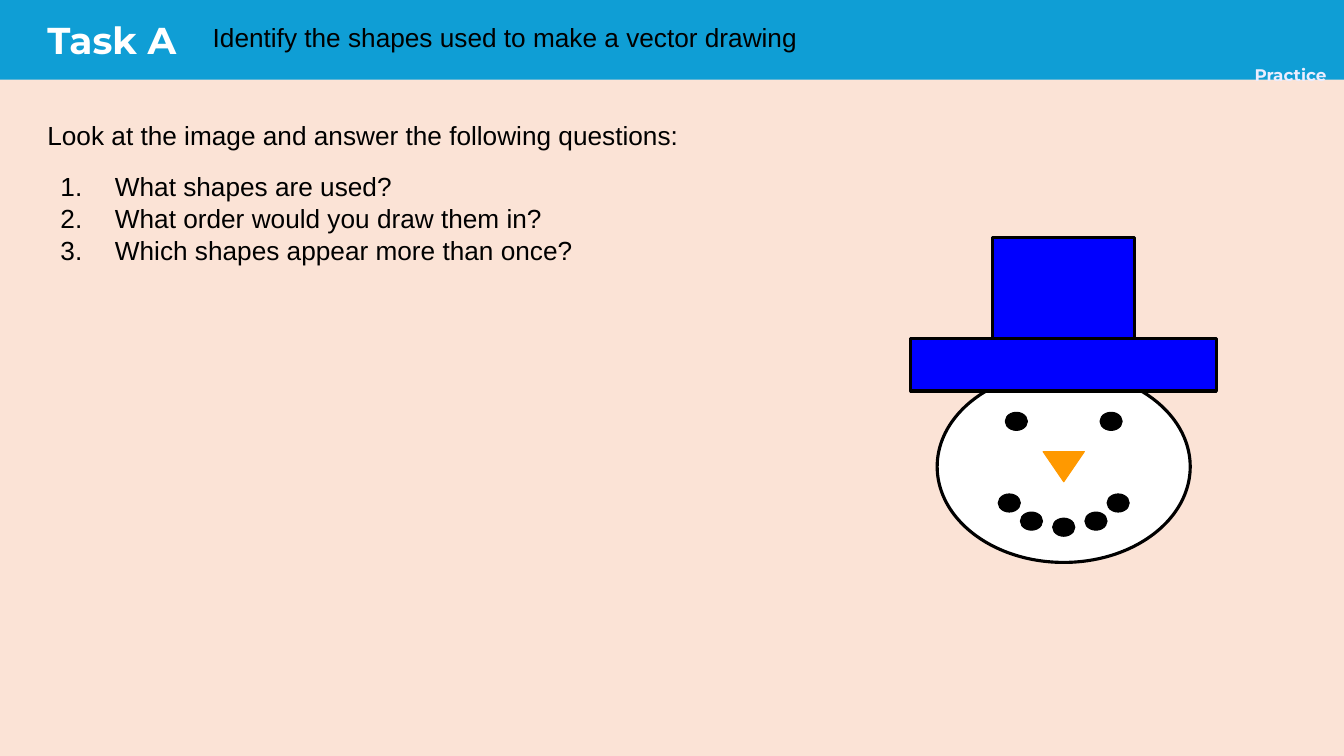
from dataclasses import dataclass

from lxml import etree
from pptx import Presentation
from pptx.dml.color import RGBColor
from pptx.enum.shapes import MSO_SHAPE
from pptx.enum.text import MSO_ANCHOR, PP_ALIGN
from pptx.oxml.ns import qn
from pptx.util import Inches, Pt

RECTANGLE = MSO_SHAPE.RECTANGLE
OVAL = MSO_SHAPE.OVAL
TRIANGLE = MSO_SHAPE.ISOSCELES_TRIANGLE
TOP, BOTTOM = MSO_ANCHOR.TOP, MSO_ANCHOR.BOTTOM
LEFT, CENTER = PP_ALIGN.LEFT, PP_ALIGN.CENTER


@dataclass(frozen=True)
class Theme:
    background: str = "FBE3D6"
    band: str = "0F9ED5"
    label: str = "EBEDFE"
    white: str = "FFFFFF"
    black: str = "000000"
    hat: str = "0000FF"
    nose: str = "FF9900"
    body_font: str = "Arial"
    heading_font: str = "Montserrat"
    body_size: float = 18.7
    task_size: float = 26.7
    label_size: float = 12
    thick_line: float = 2.25
    thin_line: float = 0.75


THEME = Theme()
QUESTIONS = (
    "What shapes are used?",
    "What order would you draw them in?",
    "Which shapes appear more than once?",
)
FACE_CENTER = 10.55
EYES = ((-0.47, 4.18), (0.47, 4.18))
MOUTH = ((-0.54, 4.99), (-0.32, 5.17), (0, 5.23), (0.32, 5.17), (0.54, 4.99))


def add_figure(slide, kind, left, top, width, height, fill, line=None, weight=0):
    shape = slide.shapes.add_shape(
        kind, Inches(left), Inches(top), Inches(width), Inches(height)
    )
    shape.shadow.inherit = False
    shape.fill.solid()
    shape.fill.fore_color.rgb = RGBColor.from_string(fill)
    if line:
        shape.line.color.rgb = RGBColor.from_string(line)
        shape.line.width = Pt(weight)
    else:
        shape.line.fill.background()
    return shape


def add_text_frame(slide, left, top, width, height, anchor=TOP):
    box = slide.shapes.add_textbox(
        Inches(left), Inches(top), Inches(width), Inches(height)
    )
    frame = box.text_frame
    frame.word_wrap = True
    frame.vertical_anchor = anchor
    frame.margin_left = frame.margin_top = 0
    frame.margin_right = frame.margin_bottom = 0
    return frame


def write(paragraph, text, size=THEME.body_size, font=THEME.body_font,
          color=THEME.black, bold=False, align=LEFT):
    paragraph.text = text
    paragraph.alignment = align
    paragraph.font.size = Pt(size)
    paragraph.font.name = font
    paragraph.font.bold = bold
    paragraph.font.color.rgb = RGBColor.from_string(color)


def number(paragraph):
    properties = paragraph._p.get_or_add_pPr()
    properties.set("marL", str(Inches(0.67)))
    properties.set("indent", str(Inches(-0.54)))
    etree.SubElement(properties, qn("a:buAutoNum"), type="arabicPeriod")


def add_header(slide):
    add_figure(slide, RECTANGLE, 0, 0, 13.33, 0.79, THEME.band)
    label = add_text_frame(slide, 12.36, 0.64, 0.88, 0.2)
    write(label.paragraphs[0], "Practice", THEME.label_size,
          THEME.heading_font, THEME.label, True, CENTER)
    task = add_text_frame(slide, 0.47, 0.06, 1.92, 0.56, BOTTOM)
    write(task.paragraphs[0], "Task A", THEME.task_size,
          THEME.heading_font, THEME.white, True)
    title = add_text_frame(slide, 2.11, 0.21, 8.37, 0.4)
    write(title.paragraphs[0], "Identify the shapes used to make a vector drawing")


def add_questions(slide):
    frame = add_text_frame(slide, 0.47, 1.18, 10.4, 1.44)
    write(frame.paragraphs[0], "Look at the image and answer the following questions:")
    for index, question in enumerate(QUESTIONS):
        paragraph = frame.add_paragraph()
        paragraph.line_spacing = 1.03
        paragraph.space_before = Pt(0 if index else 13.3)
        number(paragraph)
        write(paragraph, question)


def add_centered(slide, kind, offset, top, width, height, fill, line, weight):
    left = FACE_CENTER + offset - width / 2
    return add_figure(slide, kind, left, top, width, height, fill, line, weight)


def add_snowman(slide):
    outline = (THEME.black, THEME.thick_line)
    add_centered(slide, RECTANGLE, 0, 2.36, 1.41, 1.04, THEME.hat, *outline)
    add_centered(slide, OVAL, 0, 3.68, 2.51, 1.9, THEME.white, *outline)
    nose = add_centered(slide, TRIANGLE, 0, 4.48, 0.41, 0.3,
                        THEME.nose, THEME.nose, THEME.thin_line)
    nose.rotation = 180
    for offset, middle in EYES + MOUTH:
        add_centered(slide, OVAL, offset, middle - 0.09, 0.22, 0.18,
                     THEME.black, THEME.black, THEME.thin_line)
    add_centered(slide, RECTANGLE, 0, 3.36, 3.03, 0.52, THEME.hat, *outline)


def main():
    presentation = Presentation()
    presentation.slide_width = Inches(13.33)
    presentation.slide_height = Inches(7.5)
    slide = presentation.slides.add_slide(presentation.slide_layouts[6])
    slide.background.fill.solid()
    slide.background.fill.fore_color.rgb = RGBColor.from_string(THEME.background)
    add_header(slide)
    add_questions(slide)
    add_snowman(slide)
    presentation.save("out.pptx")


if __name__ == "__main__":
    main()
